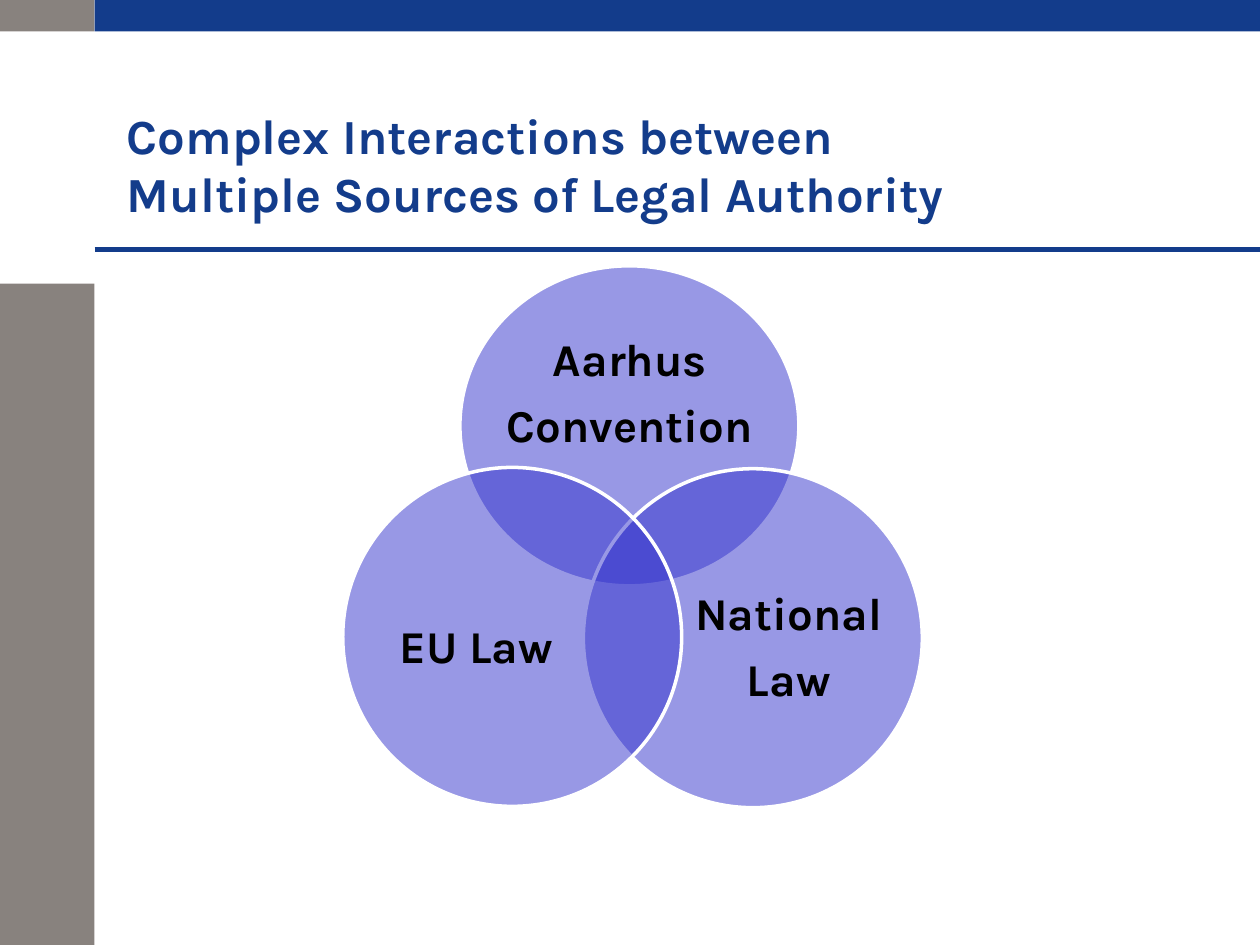
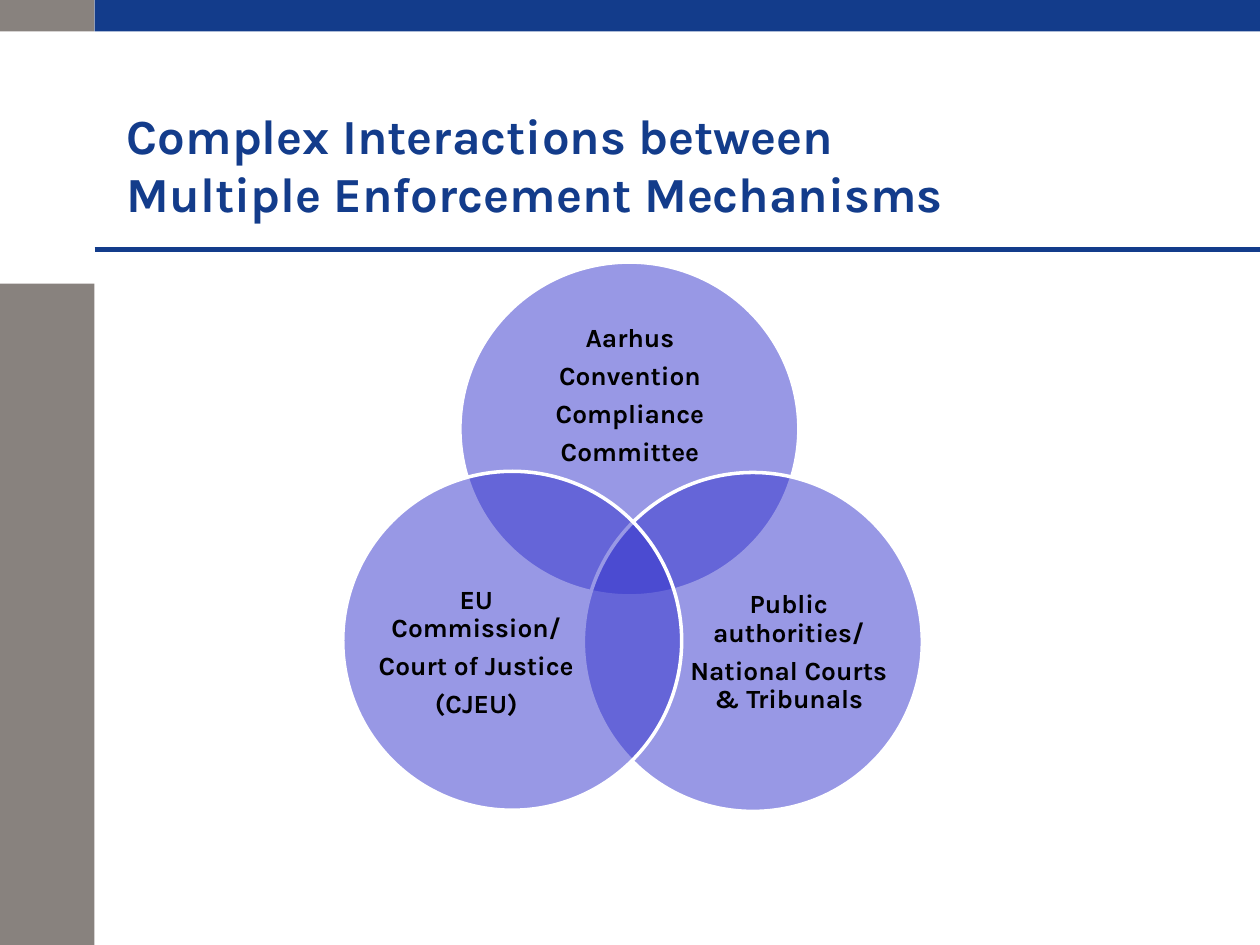
from lxml.etree import SubElement as SubEl
from pptx import Presentation
from pptx.dml.color import RGBColor
from pptx.enum.shapes import MSO_CONNECTOR as CONN, MSO_SHAPE as SHAPE
from pptx.enum.text import MSO_ANCHOR as ANCHOR, PP_ALIGN as ALIGN
from pptx.oxml.ns import qn
from pptx.util import Emu, Pt

# Shared style: 100 px to the inch
SCALE = 9144
WIDE, HIGH = 1000, 750
FONT = "Karla"
BLUE, GREY, VIOLET = "133C8B", "88827E", "3333CC"
BLACK, WHITE = "000000", "FFFFFF"
SIDE, BAND = 75, 25  # side bar width, top band height
DISC = 269  # circle diameter


def px(*nums):
    return [Emu(round(n * SCALE)) for n in nums]


def color(code):
    return RGBColor.from_string(code)


def add_form(slide, kind, box, fill):
    form = slide.shapes.add_shape(kind, *px(*box))
    form.shadow.inherit = False
    form.fill.solid()
    form.fill.fore_color.rgb = color(fill)
    form.line.fill.background()
    return form


def add_text(slide, box, paras, size, ink, pad=0, align=ALIGN.LEFT, lead=1.0, gap=0):
    frame = slide.shapes.add_textbox(*px(*box)).text_frame
    frame.word_wrap = True
    frame.vertical_anchor = ANCHOR.MIDDLE
    frame.margin_left, frame.margin_right = px(pad, pad)
    frame.margin_top, frame.margin_bottom = px(pad // 2, pad // 2)
    for i, text in enumerate(paras):
        para = frame.paragraphs[0] if i == 0 else frame.add_paragraph()
        para.text = text
        para.alignment = align
        para.line_spacing = lead
        para.space_after = Pt(gap)
        para.font.name, para.font.size, para.font.bold = FONT, Pt(size), True
        para.font.color.rgb = color(ink)


def add_rule(slide, left, right, y):
    rule = slide.shapes.add_connector(CONN.STRAIGHT, *px(left, y, right, y))
    rule.line.color.rgb = color(BLUE)
    rule.line.width = Pt(3)
    SubEl(rule._element.spPr, qn("a:effectLst"))


def add_disc(slide, box):
    disc = add_form(slide, SHAPE.OVAL, box, VIOLET)
    tint = disc._element.spPr.find(qn("a:solidFill")).find(qn("a:srgbClr"))
    SubEl(tint, qn("a:alpha"), val="50000")
    disc.line.color.rgb = color(WHITE)
    disc.line.width = Pt(2)


def add_page(deck, title):
    slide = deck.slides.add_slide(deck.slide_layouts[6])
    # Side bar, top band and rule
    add_form(slide, SHAPE.RECTANGLE, (0, 225, SIDE, HIGH - 225), GREY)
    add_form(slide, SHAPE.RECTANGLE, (0, 0, SIDE, BAND), GREY)
    add_form(slide, SHAPE.RECTANGLE, (SIDE, 0, WIDE - SIDE, BAND), BLUE)
    add_rule(slide, SIDE, WIDE, 198)
    add_text(slide, (91, 84, 733, 92), [title], 28, BLUE, pad=10)
    return slide


def add_venn(slide, top, tall, low, size, labels):
    """Top disc at y=top with height tall; lower discs start at y=low."""
    discs = [
        (365, top, DISC, tall),
        (463, low + 1, DISC, DISC),
        (272, low, DISC, DISC),
    ]
    spots = [
        (401, top + round(tall * 0.177), 198, round(tall * 0.45)),
        (545, low + 70, 162, 148),
        (297, low + 70, 162, 148),
    ]
    for disc, spot, paras in zip(discs, spots, labels):
        add_disc(slide, disc)
        add_text(slide, spot, paras, size, BLACK, align=ALIGN.CENTER,
                 lead=0.9, gap=round(size * 0.37, 1))


def main():
    deck = Presentation()
    deck.slide_width, deck.slide_height = px(WIDE, HIGH)

    # Sources of law
    slide = add_page(deck, "Complex Interactions between Multiple Sources of Legal Authority")
    add_venn(slide, 211, 254, 371, 26, [
        ["Aarhus", "Convention"],
        ["National", "Law"],
        ["EU Law"],
    ])

    # Enforcement bodies
    slide = add_page(deck, "Complex Interactions between Multiple Enforcement Mechanisms")
    add_venn(slide, 208, 265, 374, 15, [
        ["Aarhus", "Convention", "Compliance", "Committee"],
        ["Public authorities/", "National Courts & Tribunals"],
        ["EU Commission/", "Court of Justice", "(CJEU)"],
    ])

    deck.save("out.pptx")


if __name__ == "__main__":
    main()
